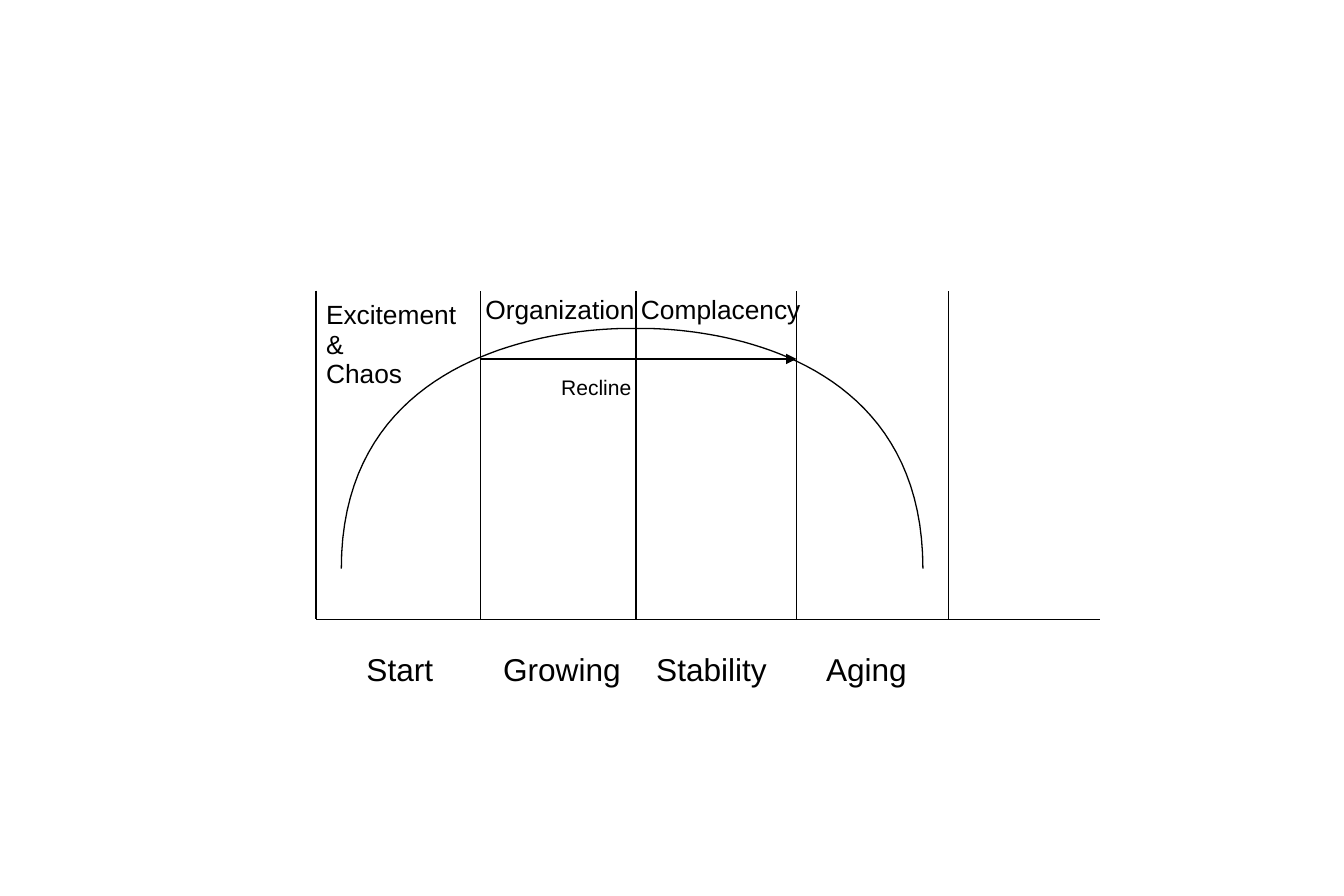
from collections import namedtuple
from dataclasses import dataclass

from lxml.etree import SubElement
from pptx import Presentation
from pptx.dml.color import RGBColor
from pptx.enum.shapes import MSO_CONNECTOR
from pptx.enum.text import MSO_ANCHOR
from pptx.oxml.ns import qn
from pptx.util import Pt

Box = namedtuple("Box", "left top width height")


@dataclass(frozen=True)
class Theme:
    font: str = "Arial"
    ink: RGBColor = RGBColor(0, 0, 0)
    line_width: float = 0.75
    line_spacing: float = 0.93
    stage_size: int = 18
    phase_size: int = 15
    note_size: int = 12


THEME = Theme()
DIVIDERS = (93.6, 182.2, 273.6, 360)
APEX = (182.2, 21.6)
CURVE_STEPS = 48


def style_line(line):
    line.width = Pt(THEME.line_width)
    line.color.rgb = THEME.ink


def add_line(slide, start, end, arrow=False):
    connector = slide.shapes.add_connector(
        MSO_CONNECTOR.STRAIGHT, *(Pt(value) for value in (*start, *end)))
    style_line(connector.line)
    if arrow:
        SubElement(connector.line._get_or_add_ln(), qn("a:tailEnd"), type="triangle")
    SubElement(connector._element.spPr, qn("a:effectLst"))


def add_label(slide, box, lines, size, wrap=False, top_inset=4.3, tabs=()):
    """Add one paragraph per line, with tab stops measured from the text edge."""
    frame = slide.shapes.add_textbox(*(Pt(value) for value in box)).text_frame
    frame.word_wrap = wrap
    frame.vertical_anchor = MSO_ANCHOR.TOP
    frame.margin_left = frame.margin_right = Pt(7.2)
    frame.margin_top, frame.margin_bottom = Pt(top_inset), Pt(3.6)
    for index, line in enumerate(lines):
        para = frame.add_paragraph() if index else frame.paragraphs[0]
        para.line_spacing = THEME.line_spacing
        if tabs:
            stops = SubElement(para._p.get_or_add_pPr(), qn("a:tabLst"))
            for position in tabs:
                SubElement(stops, qn("a:tab"), pos=str(Pt(position)), algn="l")
        span = para.add_run()
        span.text = line
        span.font.name = THEME.font
        span.font.size = Pt(size)
        span.font.color.rgb = THEME.ink


def add_half_curve(slide, start, control, end):
    """Draw a cubic curve whose second control point lies on its end."""
    points = []
    for step in range(CURVE_STEPS + 1):
        t = step / CURVE_STEPS
        weights = ((1 - t) ** 3, 3 * t * (1 - t) ** 2, 3 * t * t * (1 - t) + t ** 3)
        points.append(tuple(
            Pt(sum(weight * value for weight, value in zip(weights, values)))
            for values in zip(start, control, end)))
    builder = slide.shapes.build_freeform(*points[0])
    builder.add_line_segments(points[1:], close=False)
    curve = builder.convert_to_shape()
    curve.shadow.inherit = False
    curve.fill.background()
    style_line(curve.line)


def add_axes(slide, box):
    bottom = box.top + box.height
    add_line(slide, (box.left, box.top), (box.left, bottom))
    add_line(slide, (box.left, bottom), (box.left + box.width, bottom))
    for offset in DIVIDERS:
        x = box.left + offset
        add_line(slide, (x, bottom), (x, box.top))


def add_life_cycle(slide, box):
    apex = (box.left + APEX[0], box.top + APEX[1])
    for offset in (14.4, 345.6):
        x = box.left + offset
        add_half_curve(slide, (x, box.top + 158.4), (x, box.top + 14.4), apex)


def add_phases(slide, box):
    add_label(slide, Box(box.left - 1.4, box.top + 1.8, 98.6, 56.9),
              ("Excitement", "&", "Chaos"), THEME.phase_size, wrap=True)
    for text, divider, width in (("Organization", DIVIDERS[0], 101),
                                 ("Complacency", DIVIDERS[1], 107)):
        add_label(slide, Box(box.left + divider - 4.3, box.top - 1.4, width, 23.8),
                  (text,), THEME.phase_size)


def add_recline(slide, box):
    y = box.top + 38.9
    add_line(slide, (box.left + DIVIDERS[0], y), (box.left + DIVIDERS[2], y), arrow=True)
    add_label(slide, Box(box.left + 132.5, y + 5.8, 58, 20.2), ("Recline",), THEME.note_size)


def add_stages(slide, box):
    add_label(slide, box, ("Start\tGrowing\tStability\tAging",), THEME.stage_size,
              wrap=True, top_inset=5, tabs=(77.8, 165, 261.7))


def main():
    deck = Presentation()
    deck.slide_width, deck.slide_height = Pt(765.36), Pt(510.48)
    slide = deck.slides.add_slide(deck.slide_layouts[6])
    chart = Box(180, 165.6, 446.4, 187.2)
    add_axes(slide, chart)
    add_stages(slide, Box(201.6, 367.2, 323.3, 27.4))
    add_life_cycle(slide, chart)
    add_phases(slide, chart)
    add_recline(slide, chart)
    deck.save("out.pptx")


if __name__ == "__main__":
    main()
